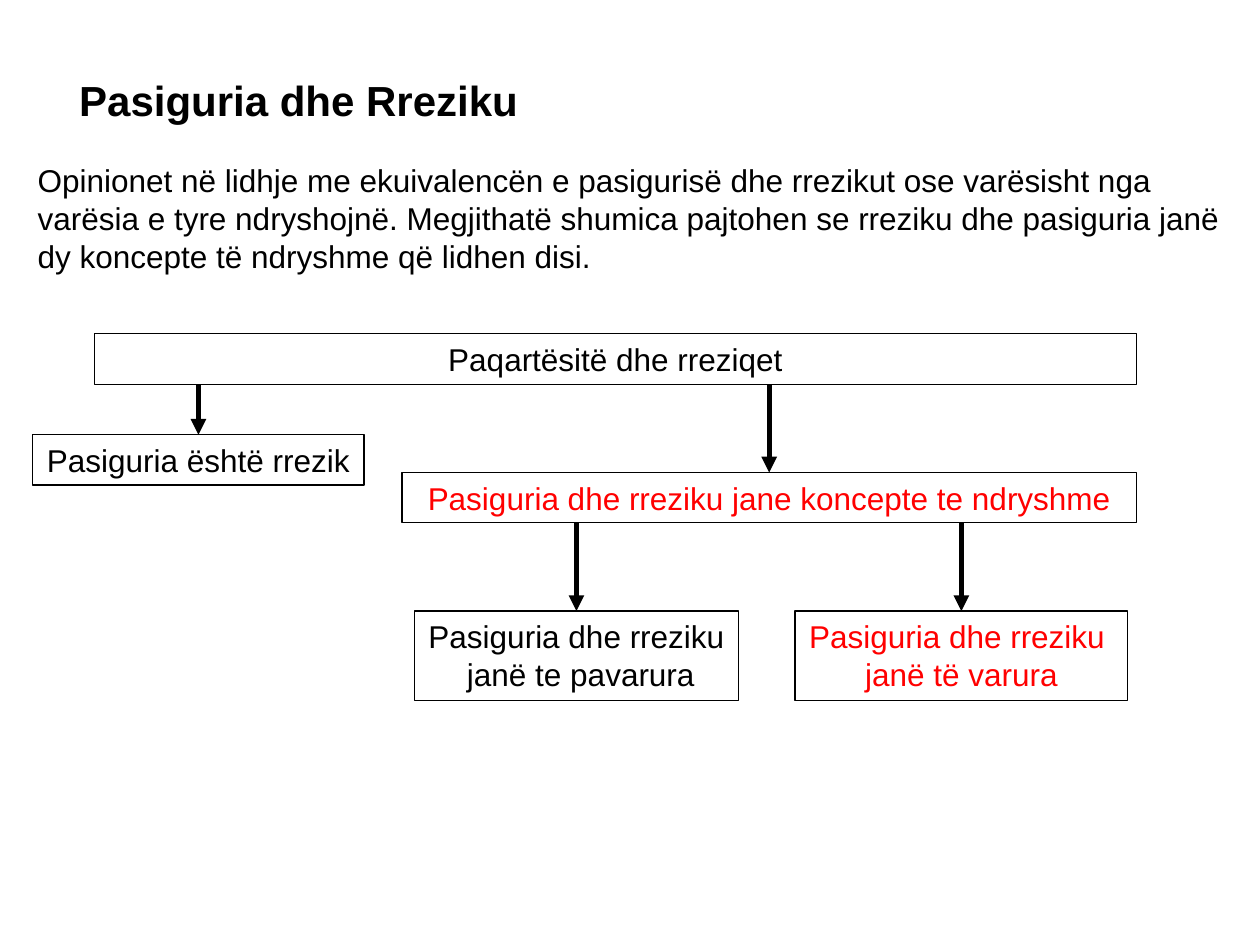
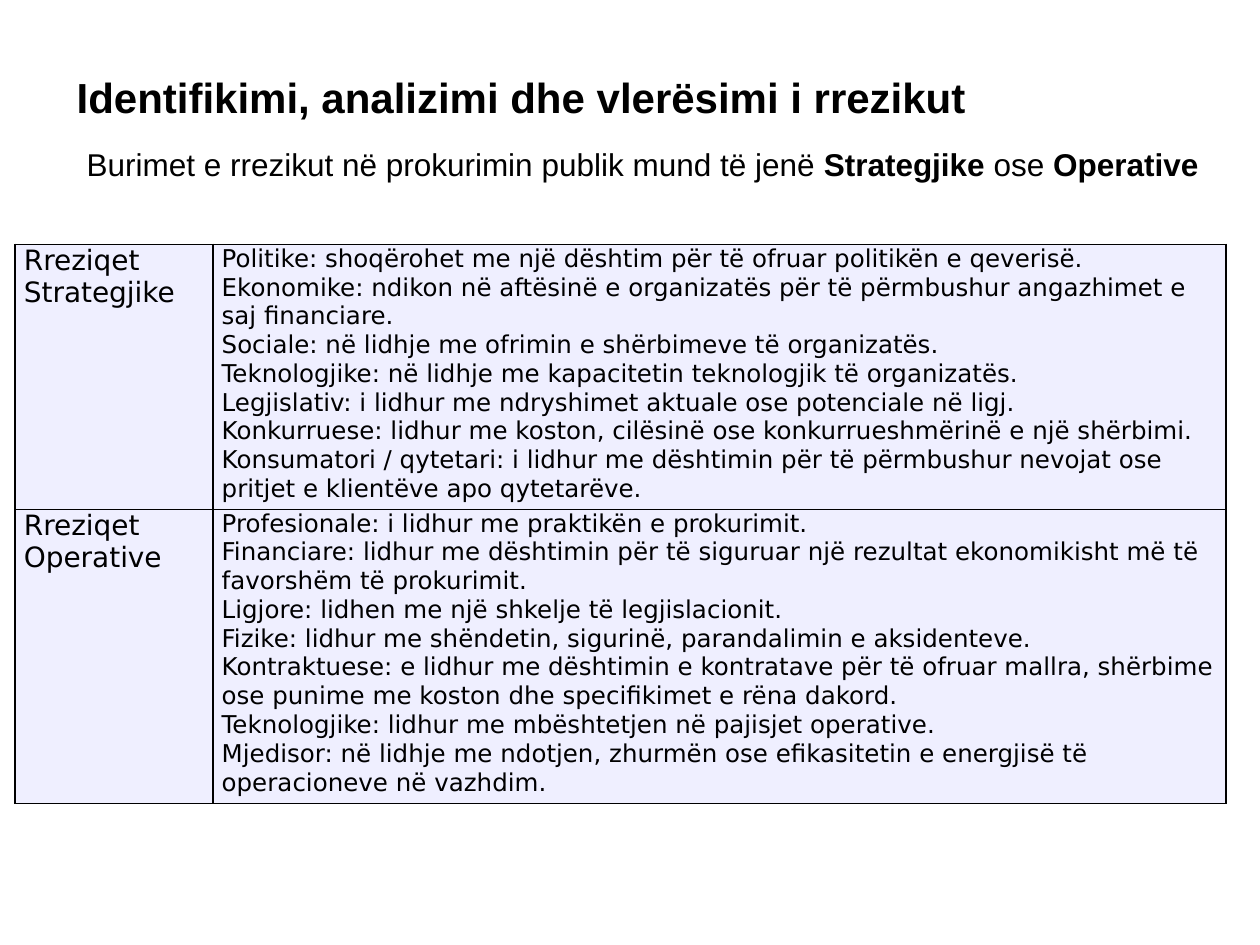
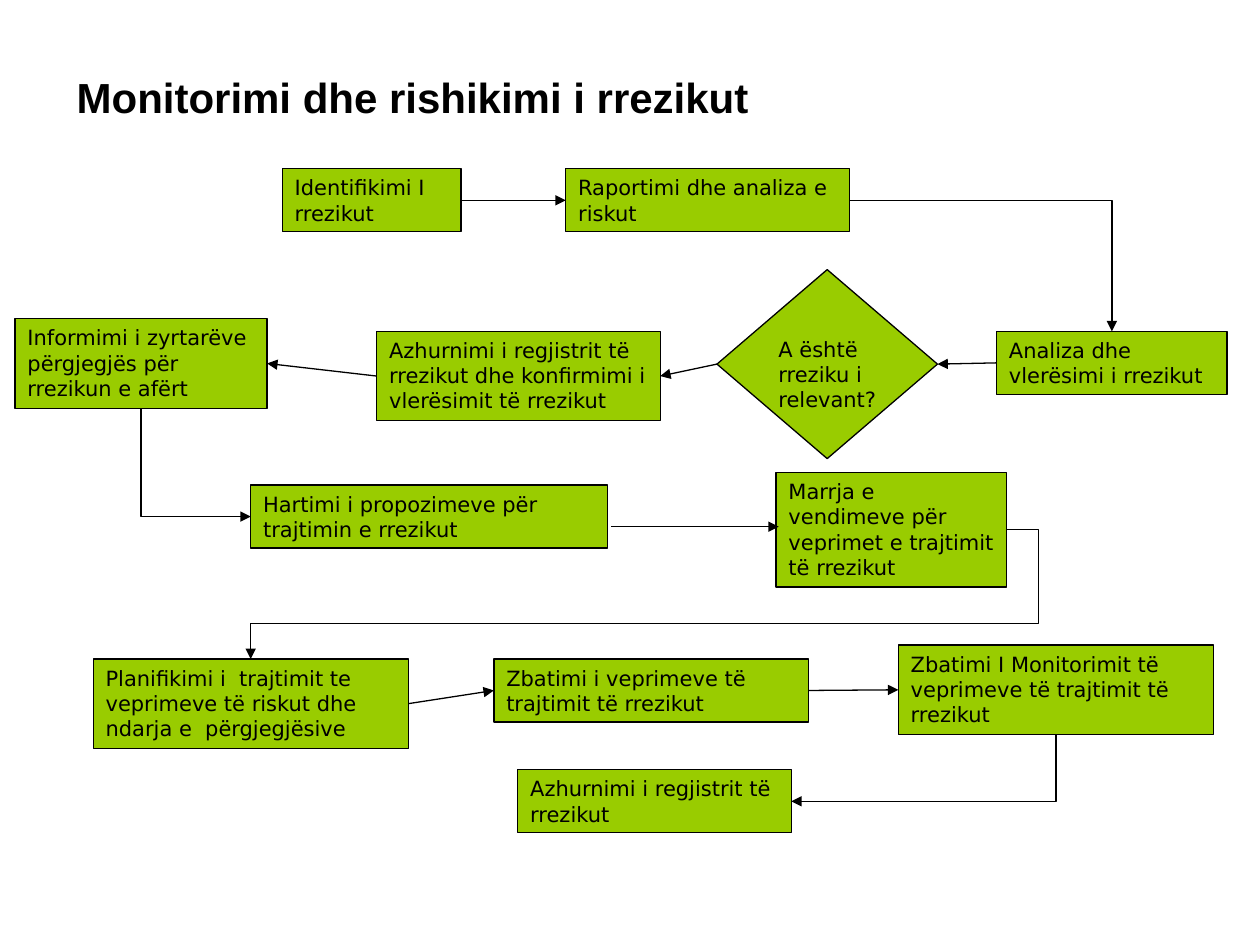
from pptx import Presentation
from pptx.dml.color import RGBColor
from pptx.enum.shapes import MSO_CONNECTOR as Connector, MSO_SHAPE as Shape
from pptx.enum.text import MSO_ANCHOR as Anchor, PP_ALIGN as Align
from pptx.oxml.ns import qn
from pptx.util import Inches, Pt
from lxml.etree import SubElement

BLACK, RED, GREEN, LAVENDER = "000000", "FF0000", "99CC00", "EFEFFF"
TITLE = {"name": "Arial", "size": Pt(24), "bold": True}
BODY = {"name": "Arial", "size": Pt(18)}
FLOW = {"name": "DejaVu Sans", "size": Pt(12)}
TABLE_HEAD = {"name": "DejaVu Sans", "size": Pt(16)}
TABLE_BODY = {"name": "DejaVu Sans", "size": Pt(14)}
TOP, LEFT, BOTTOM, RIGHT = range(4)

OPINION = ("Opinionet në lidhje me ekuivalencën e pasigurisë dhe rrezikut ose varësisht nga "
           "varësia e tyre ndryshojnë. Megjithatë shumica pajtohen se rreziku dhe pasiguria "
           "janë dy koncepte të ndryshme që lidhen disi.")
CONCEPTS = {
    "all": (["Paqartësitë dhe rreziqet"], (0.75, 2.65, 8.27, 0.4), BLACK),
    "same": (["Pasiguria është rrezik"], (0.26, 3.45, 2.63, 0.4), BLACK),
    "different": (["Pasiguria dhe rreziku jane koncepte te ndryshme"],
                  (3.19, 3.75, 5.83, 0.4), RED),
    "independent": (["Pasiguria dhe rreziku", " janë te pavarura"],
                    (3.29, 4.85, 2.57, 0.71), BLACK),
    "dependent": (["Pasiguria dhe rreziku ", "janë të varura"],
                  (6.31, 4.85, 2.64, 0.71), RED),
}
CONCEPT_LINKS = [("all", "same"), ("all", "different"),
                 ("different", "independent"), ("different", "dependent")]

SOURCES = [("Burimet e rrezikut në prokurimin publik mund të jenë ", False),
           ("Strategjike", True), (" ose ", False), ("Operative", True)]
RISKS = [
    ("Rreziqet Strategjike", [
        "Politike: shoqërohet me një dështim për të ofruar politikën e qeverisë.",
        "Ekonomike: ndikon në aftësinë e organizatës për të përmbushur angazhimet e saj financiare.",
        "Sociale: në lidhje me ofrimin e shërbimeve të organizatës.",
        "Teknologjike: në lidhje me kapacitetin teknologjik të organizatës.",
        "Legjislativ: i lidhur me ndryshimet aktuale ose potenciale në ligj.",
        "Konkurruese: lidhur me koston, cilësinë ose konkurrueshmërinë e një shërbimi.",
        "Konsumatori / qytetari: i lidhur me dështimin për të përmbushur nevojat ose "
        "pritjet e klientëve apo qytetarëve."]),
    ("Rreziqet Operative", [
        "Profesionale: i lidhur me praktikën e prokurimit.",
        "Financiare: lidhur me dështimin për të siguruar një rezultat ekonomikisht më të "
        "favorshëm të prokurimit.",
        "Ligjore: lidhen me një shkelje të legjislacionit.",
        "Fizike: lidhur me shëndetin, sigurinë, parandalimin e aksidenteve.",
        "Kontraktuese: e lidhur me dështimin e kontratave për të ofruar mallra, shërbime "
        "ose punime me koston dhe specifikimet e rëna dakord.",
        "Teknologjike: lidhur me mbështetjen në pajisjet operative.",
        "Mjedisor: në lidhje me ndotjen, zhurmën ose efikasitetin e energjisë të "
        "operacioneve në vazhdim."]),
]
COLUMN_WIDTHS, ROW_HEIGHTS = (1.57, 8.04), (2.1, 2.33)

STEPS = {
    "identify": ("Identifikimi I rrezikut", (2.24, 1.34, 1.42, 0.5)),
    "report": ("Raportimi dhe analiza e riskut", (4.49, 1.34, 2.25, 0.5)),
    "assess": ("Analiza dhe vlerësimi i rrezikut", (7.91, 2.63, 1.83, 0.5)),
    "register": ("Azhurnimi i regjistrit të rrezikut dhe konfirmimi i vlerësimit të rrezikut",
                 (2.99, 2.63, 2.25, 0.71)),
    "inform": ("Informimi i zyrtarëve përgjegjës për rrezikun e afërt",
               (0.12, 2.53, 2, 0.71)),
    "propose": ("Hartimi i propozimeve për trajtimin e rrezikut", (1.99, 3.85, 2.83, 0.5)),
    "decide": ("Marrja e vendimeve për veprimet e trajtimit të rrezikut",
               (6.16, 3.75, 1.83, 0.91)),
    "plan": ("Planifikimi i  trajtimit te veprimeve të riskut dhe ndarja e  përgjegjësive",
             (0.74, 5.23, 2.5, 0.71)),
    "apply": ("Zbatimi i veprimeve të trajtimit të rrezikut", (3.92, 5.23, 2.5, 0.5)),
    "monitor": ("Zbatimi I Monitorimit të veprimeve të trajtimit të rrezikut",
                (7.13, 5.12, 2.5, 0.71)),
    "update": ("Azhurnimi i regjistrit të rrezikut", (4.11, 6.11, 2.17, 0.5)),
}
QUESTION = ("A është rreziku i relevant?", (6.08, 2.62, 1.13, 0.71))
DIAMOND = (5.69, 2.14, 1.75, 1.5)
STEP_LINKS = [
    ("identify", RIGHT, "report", LEFT), ("report", RIGHT, "assess", TOP),
    ("assess", LEFT, "relevant", RIGHT), ("relevant", LEFT, "register", RIGHT),
    ("register", LEFT, "inform", RIGHT), ("inform", BOTTOM, "propose", LEFT),
    ("decide", RIGHT, "plan", TOP), ("plan", RIGHT, "apply", LEFT),
    ("apply", RIGHT, "monitor", LEFT), ("monitor", BOTTOM, "update", RIGHT),
]
PROPOSAL_ARROW = ((4.85, 4.18), (6.18, 4.18))
DETOUR = {"adj1": -4200, "adj2": 72300}


def rgb(value):
    return RGBColor.from_string(value)


def style(font, look, color=BLACK):
    for name, value in look.items():
        setattr(font, name, value)
    font.color.rgb = rgb(color)


def write(frame, lines, look, color=BLACK, align=Align.LEFT):
    for index, line in enumerate(lines):
        para = frame.paragraphs[0] if index == 0 else frame.add_paragraph()
        para.alignment = align
        for text, bold in [(line, look.get("bold", False))] if isinstance(line, str) else line:
            span = para.add_run()
            span.text = text
            style(span.font, {**look, "bold": bold}, color)


def add_text(page, place, lines, look, wrap=True):
    frame = page.shapes.add_textbox(*map(Inches, place)).text_frame
    frame.word_wrap = wrap
    write(frame, lines, look)


def add_box(page, place, lines, look, color=BLACK, align=Align.LEFT, fill=None,
            kind=Shape.RECTANGLE, wrap=True):
    box = page.shapes.add_shape(kind, *map(Inches, place))
    box.shadow.inherit = False
    if fill:
        box.fill.solid()
        box.fill.fore_color.rgb = rgb(fill)
    else:
        box.fill.background()
    box.line.color.rgb = rgb(BLACK)
    box.line.width = Pt(0.75)
    box.text_frame.word_wrap = wrap
    box.text_frame.vertical_anchor = Anchor.TOP
    write(box.text_frame, lines, look, color, align)
    return box


def add_arrow(page, start, end, width=0.75, kind=Connector.STRAIGHT):
    arrow = page.shapes.add_connector(kind, *start, *end)
    arrow.line.color.rgb = rgb(BLACK)
    arrow.line.width = Pt(width)
    SubElement(arrow.line._get_or_add_ln(), qn("a:tailEnd"), type="triangle")
    SubElement(arrow._element.spPr, qn("a:effectLst"))
    return arrow


def site(box, side):
    across, down = {TOP: (1, 0), LEFT: (0, 1), BOTTOM: (1, 2), RIGHT: (2, 1)}[side]
    return box.left + box.width * across // 2, box.top + box.height * down // 2


def bend(arrow, start, end, from_side, to_side):
    properties = arrow._element.spPr
    geometry = properties.find(qn("a:prstGeom"))
    if from_side == BOTTOM:
        (x1, y1), (x2, y2) = start, end
        frame = properties.find(qn("a:xfrm"))
        for name in ("flipH", "flipV"):
            frame.attrib.pop(name, None)
        frame.set("rot", str((90 if x2 < x1 else 270) * 60000))
        if x2 > x1:
            frame.set("flipH", "1")
        arrow.width, arrow.height = abs(y2 - y1), abs(x2 - x1)
        arrow.left = (x1 + x2 - arrow.width) // 2
        arrow.top = (y1 + y2 - arrow.height) // 2
    detour = from_side == RIGHT and end[0] < start[0]
    geometry.set("prst", "bentConnector4" if detour else "bentConnector2")
    if detour:
        guides = geometry.get_or_add_avLst()
        for name, value in DETOUR.items():
            SubElement(guides, qn("a:gd"), name=name, fmla=f"val {value}")


def link(page, source, from_side, target, to_side, width=0.75):
    start, end = site(source, from_side), site(target, to_side)
    bent = from_side % 2 != to_side % 2
    arrow = add_arrow(page, start, end, width, Connector.ELBOW if bent else Connector.STRAIGHT)
    arrow.begin_connect(source, from_side)
    arrow.end_connect(target, to_side)
    if bent:
        bend(arrow, start, end, from_side, to_side)


def add_page(deck, title, place):
    page = deck.slides.add_slide(deck.slide_layouts[6])
    add_text(page, place, [title], TITLE, wrap=False)
    return page


def build_concepts(deck):
    page = add_page(deck, "Pasiguria dhe Rreziku", (0.53, 0.54, 3.72, 0.5))
    add_text(page, (0.2, 1.23, 9.61, 1.01), [OPINION], BODY)
    boxes = {name: add_box(page, place, lines, BODY, color, Align.CENTER, wrap=False)
             for name, (lines, place, color) in CONCEPTS.items()}
    for parent, child in CONCEPT_LINKS:
        x, y = site(boxes[child], TOP)
        add_arrow(page, (x, site(boxes[parent], BOTTOM)[1]), (x, y), 3)


def fill_cell(cell, lines, look):
    cell.margin_left = cell.margin_right = Inches(0.07)
    cell.margin_top = cell.margin_bottom = 0
    write(cell.text_frame, lines, look)
    properties = cell._tc.get_or_add_tcPr()
    for edge in ("a:lnL", "a:lnR", "a:lnT", "a:lnB"):
        border = SubElement(properties, qn(edge), w=str(Pt(1)))
        SubElement(SubElement(border, qn("a:solidFill")), qn("a:srgbClr"), val=BLACK)
    cell.fill.solid()
    cell.fill.fore_color.rgb = rgb(LAVENDER)


def build_risks(deck):
    page = add_page(deck, "Identifikimi, analizimi dhe vlerësimi i rrezikut",
                    (0.51, 0.52, 7.32, 0.5))
    size = (sum(COLUMN_WIDTHS), sum(ROW_HEIGHTS))
    table = page.shapes.add_table(len(RISKS), 2, *map(Inches, (0.12, 1.94, *size))).table
    table.first_row = table.horz_banding = False
    for column, width in zip(table.columns, COLUMN_WIDTHS):
        column.width = Inches(width)
    for row, height, (group, kinds) in zip(table.rows, ROW_HEIGHTS, RISKS):
        row.height = Inches(height)
        fill_cell(row.cells[0], [group], TABLE_HEAD)
        fill_cell(row.cells[1], kinds, TABLE_BODY)
    add_text(page, (0.59, 1.1, 9.13, 0.4), [SOURCES], BODY)


def build_monitoring(deck):
    page = add_page(deck, "Monitorimi dhe rishikimi i rrezikut", (0.51, 0.52, 5.58, 0.5))
    boxes = {name: add_box(page, place, [text], FLOW, fill=GREEN)
             for name, (text, place) in STEPS.items()}
    boxes["relevant"] = add_box(page, DIAMOND, [], FLOW, fill=GREEN, kind=Shape.DIAMOND)
    question, place = QUESTION
    add_text(page, place, [question], FLOW)
    for source, from_side, target, to_side in STEP_LINKS:
        link(page, boxes[source], from_side, boxes[target], to_side)
    add_arrow(page, *(tuple(map(Inches, point)) for point in PROPOSAL_ARROW))


def main():
    deck = Presentation()
    deck.slide_width, deck.slide_height = Inches(10), Inches(7.5)
    build_concepts(deck)
    build_risks(deck)
    build_monitoring(deck)
    deck.save("out.pptx")


if __name__ == "__main__":
    main()
